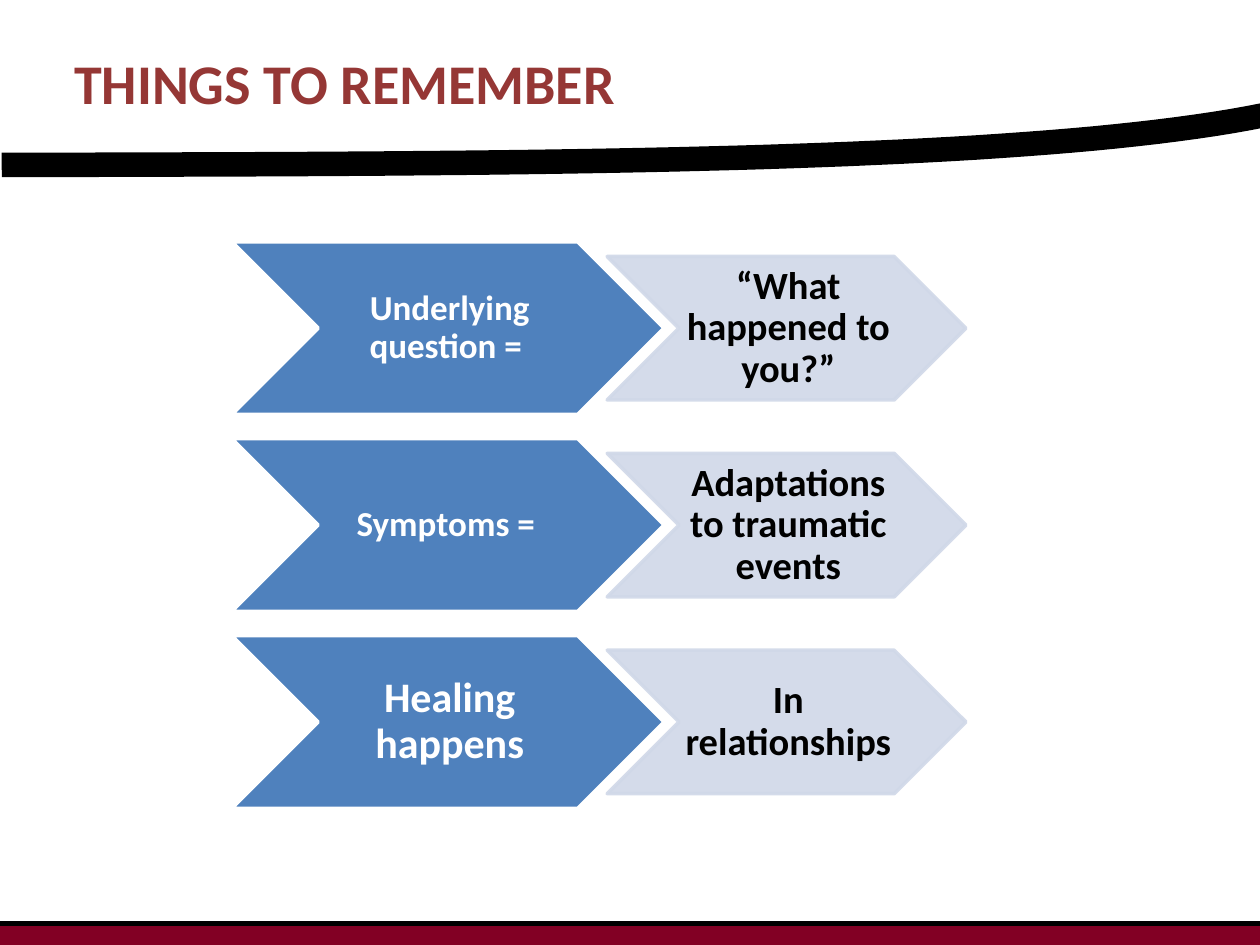
from pptx import Presentation
from pptx.util import Pt
from pptx.dml.color import RGBColor
from pptx.enum.shapes import MSO_SHAPE as SHAPE, MSO_CONNECTOR as CONN
from pptx.enum.text import PP_ALIGN as ALIGN, MSO_ANCHOR as ANCHOR, MSO_AUTO_SIZE as FIT
from pptx.oxml.ns import qn
from lxml.etree import SubElement

BLUE, PALE, BLACK, WHITE = "4F81BD", "D0D8E8", "000000", "FFFFFF"
ROWS = [
    ("Underlying question = ", 20, "“What happened to you?”"),
    ("Symptoms = ", 20, "Adaptations to traumatic events"),
    ("Healing happens", 24, "In relationships"),
]


def rgb(hex_color):
    return RGBColor.from_string(hex_color)


def set_text(tf, text, size=20, color=BLACK, anchor=ANCHOR.MIDDLE, spacing=None):
    tf.word_wrap = True
    tf.auto_size = FIT.NONE
    tf.vertical_anchor = anchor
    p = tf.paragraphs[0]
    p.alignment = ALIGN.CENTER
    p.line_spacing = spacing
    r = p.add_run()
    r.text = text
    r.font.name = "Calibri"
    r.font.size = Pt(size)
    r.font.bold = True
    r.font.color.rgb = rgb(color)


def set_alpha(sp, percent):
    for clr in sp._element.spPr.iter(qn("a:srgbClr")):
        SubElement(clr, qn("a:alpha"), val=str(percent * 1000))


def add_title(s, text):
    sp = s.shapes.title
    sp.left, sp.top, sp.width, sp.height = Pt(-1), Pt(24), Pt(396), Pt(144)
    set_text(sp.text_frame, text, size=32, color="953735", anchor=ANCHOR.TOP)


def add_box(s, kind, x, y, w, h, fill, line=None):
    sp = s.shapes.add_shape(kind, Pt(x), Pt(y), Pt(w), Pt(h))
    sp.shadow.inherit = False
    sp.fill.solid()
    sp.fill.fore_color.rgb = rgb(fill)
    if line:
        sp.line.color.rgb = rgb(line)
        sp.line.width = Pt(2)
    else:
        sp.line.fill.background()
    return sp


def add_chevron(s, x, y, w, h, fill, line, text, size, color):
    sp = add_box(s, SHAPE.CHEVRON, x, y, w, h, fill, line)
    tf = sp.text_frame
    tf.margin_left, tf.margin_right = Pt(2), Pt(0)
    tf.margin_top = tf.margin_bottom = Pt(1)
    set_text(tf, text, size=size, color=color, spacing=0.9)
    return sp


def add_row(s, y, label, size, answer):
    label_h, answer_h = 98.7, 82
    add_chevron(s, 132.5, y, 247, label_h, BLUE, WHITE, label, size, WHITE)
    sp = add_chevron(s, 347, y + (label_h - answer_h) / 2, 205, answer_h,
                     PALE, PALE, answer, 22, BLACK)
    set_alpha(sp, 90)


def bezier(ctrl, t):
    weights = ((1 - t) ** 3, 3 * t * (1 - t) ** 2, 3 * t * t * (1 - t), t ** 3)
    return tuple(Pt(sum(k * c[i] for k, c in zip(weights, ctrl))) for i in (0, 1))


def add_swoosh(s):
    ctrl = [(1, 94.3), (306, 93.6), (610.6, 93.6), (739.4, 62)]
    steps = 48
    pts = [bezier(ctrl, i / steps) for i in range(steps + 1)]
    fb = s.shapes.build_freeform(*pts[0])
    fb.add_line_segments(pts[1:], close=False)
    sp = fb.convert_to_shape()
    sp.shadow.inherit = False
    sp.fill.background()
    sp.line.color.rgb = rgb(BLACK)
    sp.line.width = Pt(14)


def add_footer(s):
    x, y, w = -0.7, 527.8, 720.7
    add_box(s, SHAPE.RECTANGLE, x, y, w, 12.2, "820024")
    c = s.shapes.add_connector(CONN.STRAIGHT, Pt(x), Pt(y), Pt(x + w), Pt(y))
    c.line.color.rgb = rgb(BLACK)
    c.line.width = Pt(3)
    SubElement(c._element.spPr, qn("a:effectLst"))


def main():
    prs = Presentation()
    prs.slide_width, prs.slide_height = Pt(720), Pt(540)
    s = prs.slides.add_slide(prs.slide_layouts[5])
    add_title(s, "THINGS TO REMEMBER")
    for i, row in enumerate(ROWS):
        add_row(s, 138.2 + 112.5 * i, *row)
    add_swoosh(s)
    add_footer(s)
    prs.save("out.pptx")


if __name__ == "__main__":
    main()
